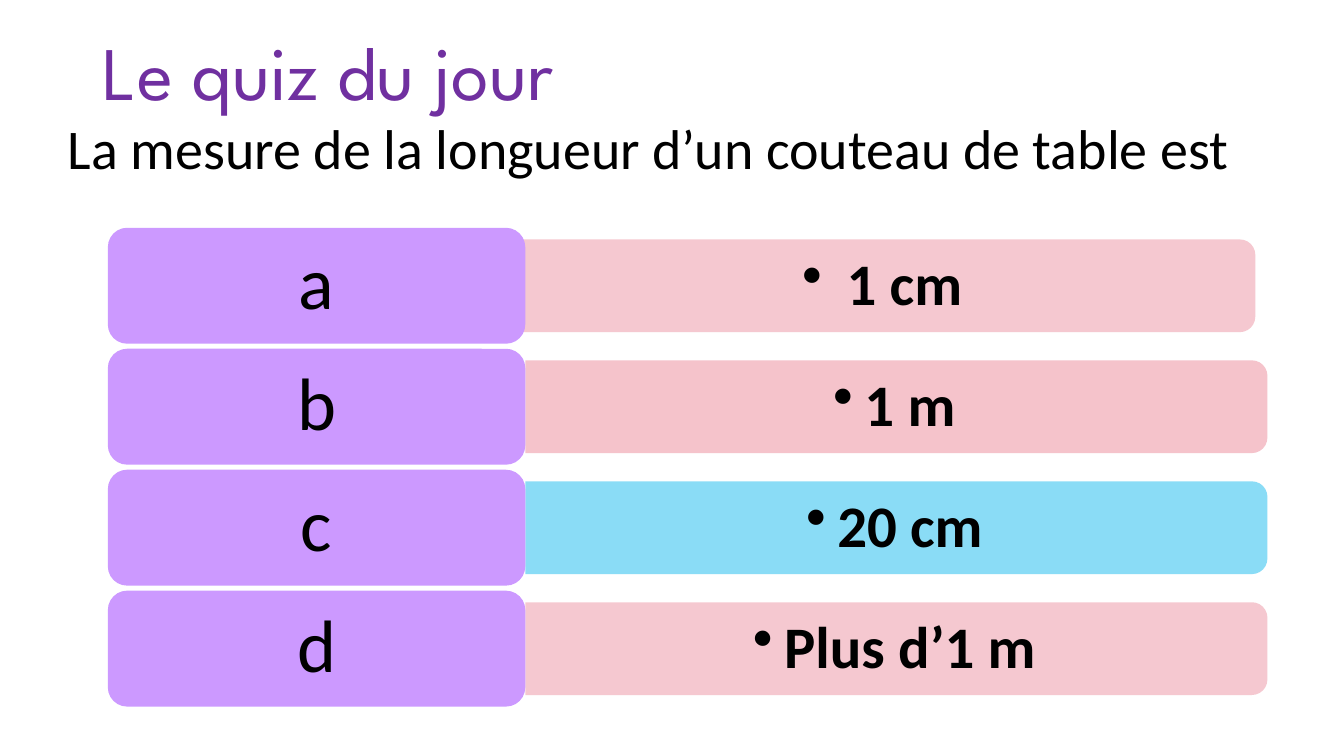
from lxml.etree import SubElement
from pptx import Presentation
from pptx.dml.color import RGBColor
from pptx.enum.shapes import MSO_SHAPE
from pptx.enum.text import MSO_ANCHOR, MSO_AUTO_SIZE, PP_ALIGN
from pptx.oxml.ns import qn
from pptx.util import Inches, Pt

COLORS = {
    "title": "7030A0",
    "text": "000000",
    "label": "CC99FF",
    "answer": "F5C3CB",
    "correct": "7ED9F6",
}
ROW_STEP = 1.2
LABEL_W, LABEL_H = 4.14, 1.15
BAR_W, BAR_H = 7.36, 0.92
CHOICES = [
    ("a", " 1 cm", "answer", 90, 4.02),
    ("b", "1 m", "answer", 100, 4.14),
    ("c", "20 cm", "correct", 90, 4.14),
    ("d", "Plus d’1 m", "answer", 90, 4.14),
]


def write(tf, text, size, color="text", font="Calibri", bold=False, align=PP_ALIGN.CENTER):
    """Write one formatted run in the first paragraph and return the paragraph."""
    p = tf.paragraphs[0]
    p.alignment = align
    r = p.add_run()
    r.text = text
    r.font.size = Pt(size)
    r.font.name = font
    r.font.bold = bold
    r.font.color.rgb = RGBColor.from_string(COLORS[color])
    return p


def set_margins(tf, side, top):
    """Set equal horizontal and equal vertical text insets."""
    tf.margin_left = tf.margin_right = Inches(side)
    tf.margin_top = tf.margin_bottom = Inches(top)


def add_block(s, kind, x, y, w, h, color):
    """Add a flat borderless shape."""
    sp = s.shapes.add_shape(kind, Inches(x), Inches(y), Inches(w), Inches(h))
    sp.shadow.inherit = False
    sp.fill.solid()
    sp.fill.fore_color.rgb = RGBColor.from_string(COLORS[color])
    sp.line.fill.background()
    return sp


def add_title(s, x, y, w, h):
    """Place the slide title in its placeholder."""
    title = s.shapes.title
    title.left, title.top, title.width, title.height = map(Inches, (x, y, w, h))
    tf = title.text_frame
    tf.auto_size = MSO_AUTO_SIZE.NONE
    tf.vertical_anchor = MSO_ANCHOR.MIDDLE
    p = write(tf, "Le quiz du jour", 54, "title", "League Spartan", align=PP_ALIGN.LEFT)
    p.line_spacing = 0.9


def add_question(s, x, y, w, h):
    """Place the quiz question."""
    tf = s.shapes.add_textbox(*map(Inches, (x, y, w, h))).text_frame
    tf.word_wrap = True
    write(tf, "La mesure de la longueur d’un couteau de table est", 40)


def add_answer(s, x, y, text, color, opacity):
    """Add an answer bar, rounded on its right, with a bulleted text."""
    bar = add_block(s, MSO_SHAPE.ROUND_2_SAME_RECTANGLE, x + (BAR_W - BAR_H) / 2,
                    y - (BAR_W - BAR_H) / 2, BAR_H, BAR_W, color)
    bar.rotation = 90
    if opacity < 100:
        clr = bar.fill._xPr.find(".//" + qn("a:srgbClr"))
        SubElement(clr, qn("a:alpha"), val=str(opacity * 1000))

    box = s.shapes.add_textbox(*map(Inches, (x, y + 0.05, BAR_W - 0.04, BAR_H - 0.09)))
    tf = box.text_frame
    tf.word_wrap = True
    tf.vertical_anchor = MSO_ANCHOR.MIDDLE
    set_margins(tf, 0.17, 0.09)
    p = write(tf, text, 42, bold=True)
    p.level = 1
    p.line_spacing = 0.9
    pPr = p._p.get_or_add_pPr()
    pPr.set("marL", str(Inches(0.31)))
    pPr.set("indent", str(-Inches(0.31)))
    SubElement(pPr, qn("a:buChar"), char="•")


def add_label(s, x, y, letter):
    """Add the rounded block that holds the letter of a choice."""
    sp = add_block(s, MSO_SHAPE.ROUNDED_RECTANGLE, x, y, LABEL_W, LABEL_H, "label")
    tf = sp.text_frame
    tf.vertical_anchor = MSO_ANCHOR.MIDDLE
    set_margins(tf, 0.22, 0.11)
    write(tf, letter, 53).line_spacing = 0.9


def add_choices(s, x, y):
    """Stack the lettered choices from the given corner."""
    for i, (letter, text, color, opacity, offset) in enumerate(CHOICES):
        top = y + i * ROW_STEP
        add_answer(s, x + offset, top + (LABEL_H - BAR_H) / 2, text, color, opacity)
        add_label(s, x, top, letter)


def main():
    """Build the quiz slide and save it."""
    prs = Presentation()
    prs.slide_width, prs.slide_height = Inches(13.33), Inches(7.5)
    s = prs.slides.add_slide(prs.slide_layouts[5])
    add_title(s, 0.92, 0.27, 11.5, 0.97)
    add_choices(s, 1.07, 2.26)
    add_question(s, 0.44, 1.08, 11.98, 0.77)
    prs.save("out.pptx")


if __name__ == "__main__":
    main()
